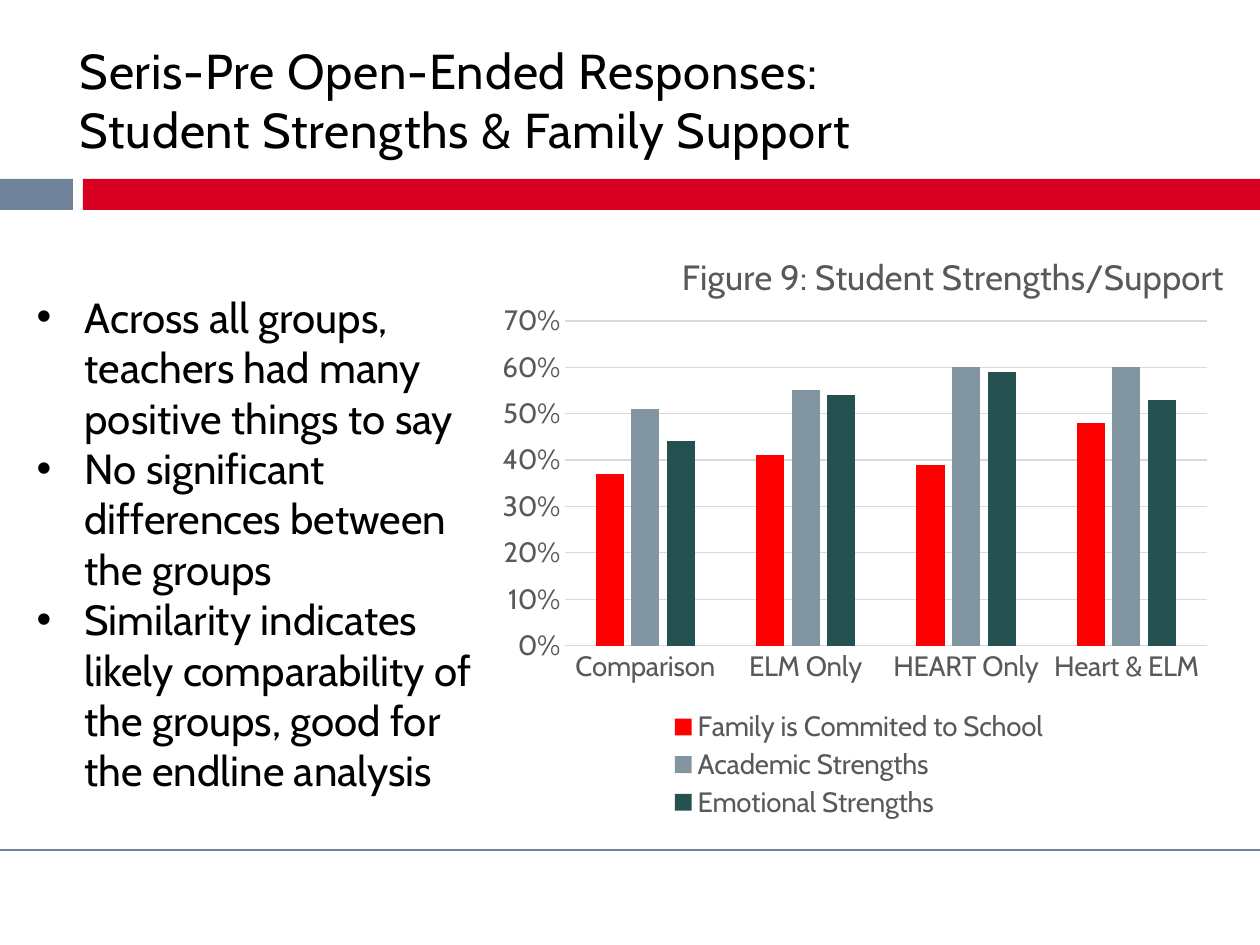
"""Build a slide comparing student strengths and family support across groups."""
from dataclasses import dataclass

from lxml.etree import SubElement
from pptx import Presentation
from pptx.chart.data import CategoryChartData
from pptx.dml.color import RGBColor
from pptx.enum.chart import XL_CHART_TYPE, XL_LEGEND_POSITION, XL_TICK_MARK
from pptx.enum.shapes import MSO_CONNECTOR, MSO_SHAPE
from pptx.enum.text import MSO_ANCHOR, PP_ALIGN
from pptx.oxml import parse_xml
from pptx.oxml.ns import nsdecls, qn
from pptx.util import Emu, Pt

TITLE = "Seris-Pre Open-Ended Responses:\vStudent Strengths & Family Support"
BULLETS = [
    "Across all groups, teachers had many positive things to say",
    "No significant differences between the groups",
    "Similarity indicates likely comparability of the groups, good for the endline analysis",
]
CHART_TITLE = "Figure 9: Student Strengths/Support"
GROUPS = ["Comparison", "ELM Only", "HEART Only", "Heart & ELM"]
SERIES = [
    ("Family is Commited to School", (0.37, 0.41, 0.39, 0.48), "FF0000"),
    ("Academic Strengths", (0.51, 0.55, 0.60, 0.60), "8296A1"),
    ("Emotional Strengths", (0.44, 0.54, 0.59, 0.53), "255251"),
]
BANDS = [((0, 179, 73, 31), "71839A"), ((83, 179, 1177, 31), "D80021")]
TITLE_BOX = (67, 52, 1113, 113)
LIST_BOX = (24, 285, 464, 522)
CHART_BOX = (488, 219, 743, 607)
PLOT_BOX = (566, 321, 650, 325)
LEGEND_BOX = (664, 706, 400, 118)
CHART_TITLE_POINT = (678, 246)
FOOTER_LINE_Y = 850
INDENT = 48


@dataclass(frozen=True)
class Theme:
    font: str = "Cabin"
    text: str = "000000"
    chart_text: str = "595959"
    grid: str = "D9D9D9"
    rule: str = "718399"
    title_size: int = 28
    list_size: int = 24
    chart_title_size: int = 20
    chart_size: int = 16


THEME = Theme()


def px(value):
    return Emu(round(value * 914400 / 126))


def place(shape, box):
    shape.left, shape.top, shape.width, shape.height = map(px, box)


def style(font, size, color):
    font.name, font.size, font.bold = THEME.font, Pt(size), False
    font.color.rgb = RGBColor.from_string(color)


def style_line(line, color, width):
    line.color.rgb = RGBColor.from_string(color)
    line.width = Pt(width)


def add_bands(slide):
    for box, color in BANDS:
        band = slide.shapes.add_shape(MSO_SHAPE.RECTANGLE, *map(px, box))
        band.shadow.inherit = False
        band.fill.solid()
        band.fill.fore_color.rgb = RGBColor.from_string(color)
        band.line.fill.background()
    rule = slide.shapes.add_connector(
        MSO_CONNECTOR.STRAIGHT, *map(px, (0, FOOTER_LINE_Y, 1260, FOOTER_LINE_Y))
    )
    style_line(rule.line, THEME.rule, 1)
    SubElement(rule.line._get_or_add_ln().getparent(), qn("a:effectLst"))


def fill_title(title):
    place(title, TITLE_BOX)
    frame = title.text_frame
    frame.text = TITLE
    frame.vertical_anchor = MSO_ANCHOR.BOTTOM
    frame.paragraphs[0].alignment = PP_ALIGN.LEFT
    for run in frame.paragraphs[0].runs:
        style(run.font, THEME.title_size, THEME.text)
        run.font._element.set("spc", "50")


def fill_list(body):
    place(body, LIST_BOX)
    frame = body.text_frame
    frame.text = "\n".join(BULLETS)
    frame.vertical_anchor = MSO_ANCHOR.TOP
    for paragraph in frame.paragraphs:
        paragraph.space_before = Pt(0)
        properties = paragraph._p.get_or_add_pPr()
        properties.set("marL", str(px(INDENT)))
        properties.set("indent", str(-px(INDENT)))
        SubElement(properties, qn("a:buFont")).set("typeface", "Arial")
        SubElement(properties, qn("a:buChar")).set("char", "•")
        for run in paragraph.runs:
            style(run.font, THEME.list_size, THEME.text)


def set_layout(element, index, box, inner=False):
    left, top, width, height = CHART_BOX
    values = {"x": (box[0] - left) / width, "y": (box[1] - top) / height}
    if len(box) == 4:
        values.update(w=box[2] / width, h=box[3] / height)
    target = '<c:layoutTarget val="inner"/>' if inner else ""
    modes = '<c:xMode val="edge"/><c:yMode val="edge"/>'
    numbers = "".join(f'<c:{key} val="{value:.3f}"/>' for key, value in values.items())
    for existing in element.findall(qn("c:layout")):
        element.remove(existing)
    element.insert(index, parse_xml(
        f'<c:layout {nsdecls("c")}><c:manualLayout>{target}{modes}{numbers}'
        "</c:manualLayout></c:layout>"
    ))


def format_axes(chart):
    for axis in (chart.category_axis, chart.value_axis):
        axis.major_tick_mark = axis.minor_tick_mark = XL_TICK_MARK.NONE
        style(axis.tick_labels.font, THEME.chart_size, THEME.chart_text)
    style_line(chart.category_axis.format.line, THEME.grid, 0.75)
    values = chart.value_axis
    values.minimum_scale, values.maximum_scale, values.major_unit = 0, 0.7, 0.1
    values.tick_labels.number_format = "0%"
    values.tick_labels.number_format_is_linked = False
    values.format.line.fill.background()
    style_line(values.major_gridlines.format.line, THEME.grid, 0.75)


def add_strengths_chart(slide):
    data = CategoryChartData(number_format="0%")
    data.categories = GROUPS
    for name, values, _ in SERIES:
        data.add_series(name, values)
    chart = slide.shapes.add_chart(
        XL_CHART_TYPE.COLUMN_CLUSTERED, *map(px, CHART_BOX), data
    ).chart
    style(chart.font, THEME.chart_size, THEME.text)
    format_axes(chart)
    plot = chart.plots[0]
    plot.gap_width, plot.overlap, plot.vary_by_categories = 219, -27, False
    for series, (_, _, color) in zip(plot.series, SERIES):
        series.format.fill.solid()
        series.format.fill.fore_color.rgb = RGBColor.from_string(color)
    chart.has_title = True
    chart.chart_title.include_in_layout = False
    title_frame = chart.chart_title.text_frame
    title_frame.text = CHART_TITLE
    style(title_frame.paragraphs[0].runs[0].font, THEME.chart_title_size, THEME.chart_text)
    chart.has_legend = True
    chart.legend.position = XL_LEGEND_POSITION.BOTTOM
    chart.legend.include_in_layout = False
    style(chart.legend.font, THEME.chart_size, THEME.chart_text)
    set_layout(chart.chart_title._element, 1, CHART_TITLE_POINT)
    set_layout(chart.legend._element, 1, LEGEND_BOX)
    set_layout(plot._element.getparent(), 0, PLOT_BOX, inner=True)


def main():
    presentation = Presentation()
    presentation.slide_width, presentation.slide_height = px(1260), px(945)
    slide = presentation.slides.add_slide(presentation.slide_layouts[1])
    add_bands(slide)
    fill_title(slide.shapes.title)
    fill_list(slide.placeholders[1])
    add_strengths_chart(slide)
    presentation.save("out.pptx")


if __name__ == "__main__":
    main()
